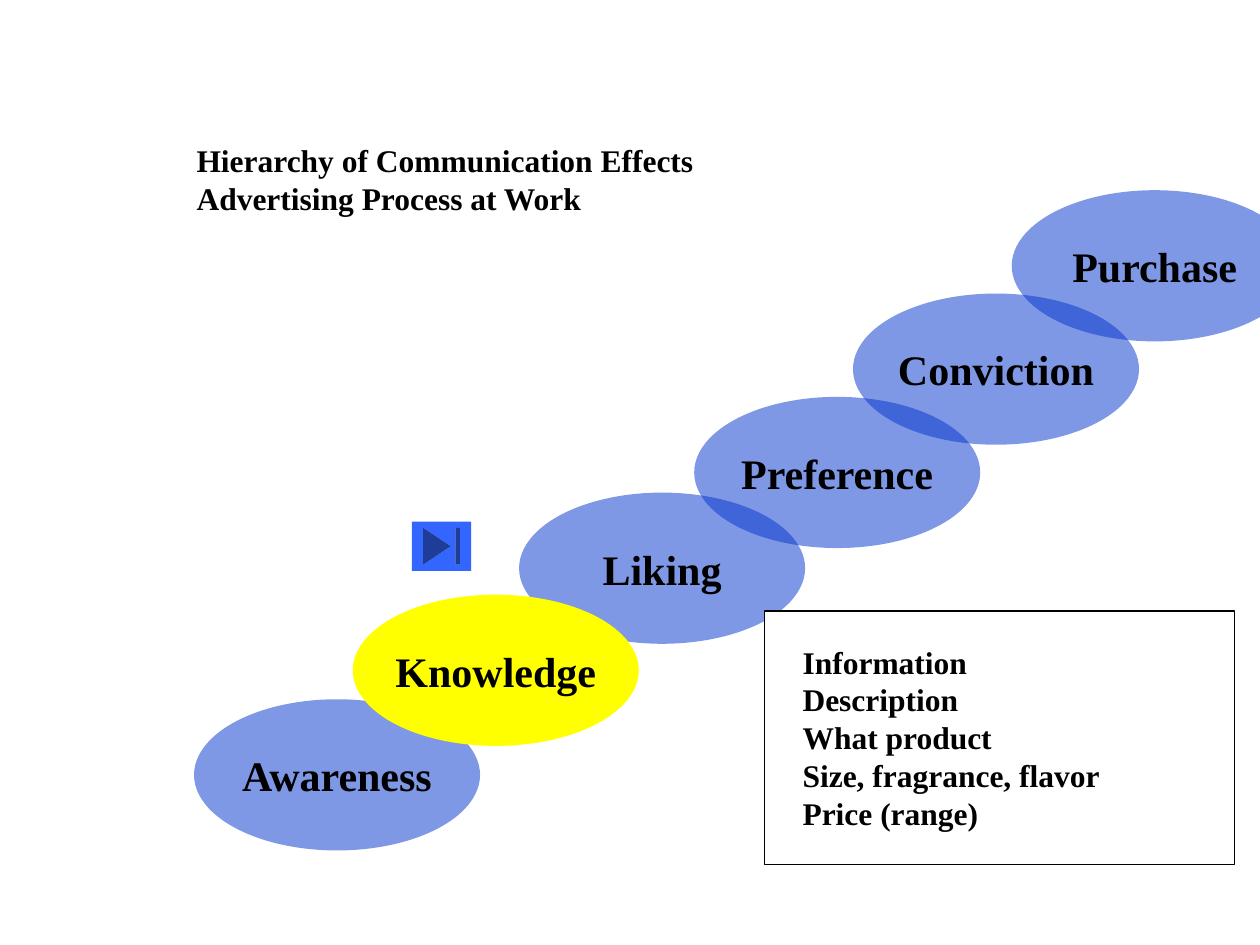
from dataclasses import dataclass

from lxml import etree
from pptx import Presentation
from pptx.dml.color import RGBColor
from pptx.enum.shapes import MSO_SHAPE
from pptx.enum.text import MSO_ANCHOR, MSO_AUTO_SIZE, PP_ALIGN
from pptx.oxml.ns import qn
from pptx.util import Pt

PX = 9144  # 100 px to the inch
OVAL, RECT, BUTTON = MSO_SHAPE.OVAL, MSO_SHAPE.RECTANGLE, MSO_SHAPE.ACTION_BUTTON_END
TOP, MIDDLE = MSO_ANCHOR.TOP, MSO_ANCHOR.MIDDLE
LEFT, CENTER = PP_ALIGN.LEFT, PP_ALIGN.CENTER
FIT_SHAPE = MSO_AUTO_SIZE.SHAPE_TO_FIT_TEXT
TITLE_ONLY = 5


@dataclass(frozen=True)
class Theme:
    font: str = "Times New Roman"
    text: str = "000000"
    step: str = "0033CC"
    active: str = "FFFF00"
    button: str = "3366FF"
    paper: str = "FFFFFF"
    body_size: int = 18
    step_size: int = 24
    step_alpha: int = 50


THEME = Theme()
TITLE = ["Hierarchy of Communication Effects", "Advertising Process at Work"]
DETAILS = ["Information", "Description", "What product",
           "Size, fragrance, flavor", "Price (range)"]
STEP_SIZE = (227, 120)
# Offsets of each step from the staircase's left and bottom edges
STEPS = [("Awareness", 0, 0), ("Liking", 258, 164), ("Preference", 397, 240),
         ("Conviction", 523, 322), ("Purchase", 649, 404), ("Knowledge", 126, 83)]
ACTIVE_STEP = "Knowledge"


def emu(*lengths):
    return [n * PX for n in lengths]


def write(tf, lines, size, align=LEFT, anchor=TOP):
    tf.text = "\n".join(lines)
    tf.vertical_anchor = anchor
    for p in tf.paragraphs:
        p.alignment = align
        for r in p.runs:
            r.font.name = THEME.font
            r.font.size = Pt(size)
            r.font.bold = True
            r.font.color.rgb = RGBColor.from_string(THEME.text)


def add_filled(s, kind, box, color, alpha=100):
    """Add a flat, unlined shape; alpha is its opacity in percent."""
    sp = s.shapes.add_shape(kind, *emu(*box))
    sp.shadow.inherit = False
    sp.fill.solid()
    sp.fill.fore_color.rgb = RGBColor.from_string(color)
    sp.line.fill.background()
    if alpha < 100:
        clr = sp.fill._xPr.find(qn("a:solidFill"))[0]
        etree.SubElement(clr, qn("a:alpha")).set("val", str(alpha * 1000))
    return sp


def add_title(s, box):
    title = s.shapes.title
    title.left, title.top, title.width, title.height = emu(*box)
    tf = title.text_frame
    write(tf, TITLE, THEME.body_size)
    tf.word_wrap = True
    tf.auto_size = FIT_SHAPE


def add_staircase(s, box):
    left, top, _, height = box
    w, h = STEP_SIZE
    for name, dx, rise in STEPS:
        active = name == ACTIVE_STEP
        sp = add_filled(s, OVAL, (left + dx, top + height - h - rise, w, h),
                        THEME.active if active else THEME.step,
                        100 if active else THEME.step_alpha)
        write(sp.text_frame, [name], THEME.step_size, CENTER, MIDDLE)
        sp.text_frame.word_wrap = False


def add_details(s, box):
    sp = add_filled(s, RECT, box, THEME.paper)
    sp.line.color.rgb = RGBColor.from_string(THEME.text)
    sp.line.width = Pt(0.75)
    tf = sp.text_frame
    tf.margin_left = tf.margin_right = 30 * PX
    tf.margin_top = tf.margin_bottom = 25 * PX
    write(tf, DETAILS, THEME.body_size)
    tf.word_wrap = True
    tf.auto_size = FIT_SHAPE


def main():
    prs = Presentation()
    prs.slide_width, prs.slide_height = emu(1000, 750)
    s = prs.slides.add_slide(prs.slide_layouts[TITLE_ONLY])
    add_title(s, (146, 107, 500, 70))
    add_staircase(s, (154, 151, 876, 524))
    add_details(s, (607, 485, 373, 201))
    add_filled(s, BUTTON, (327, 414, 47, 39), THEME.button)
    prs.save("out.pptx")


if __name__ == "__main__":
    main()
